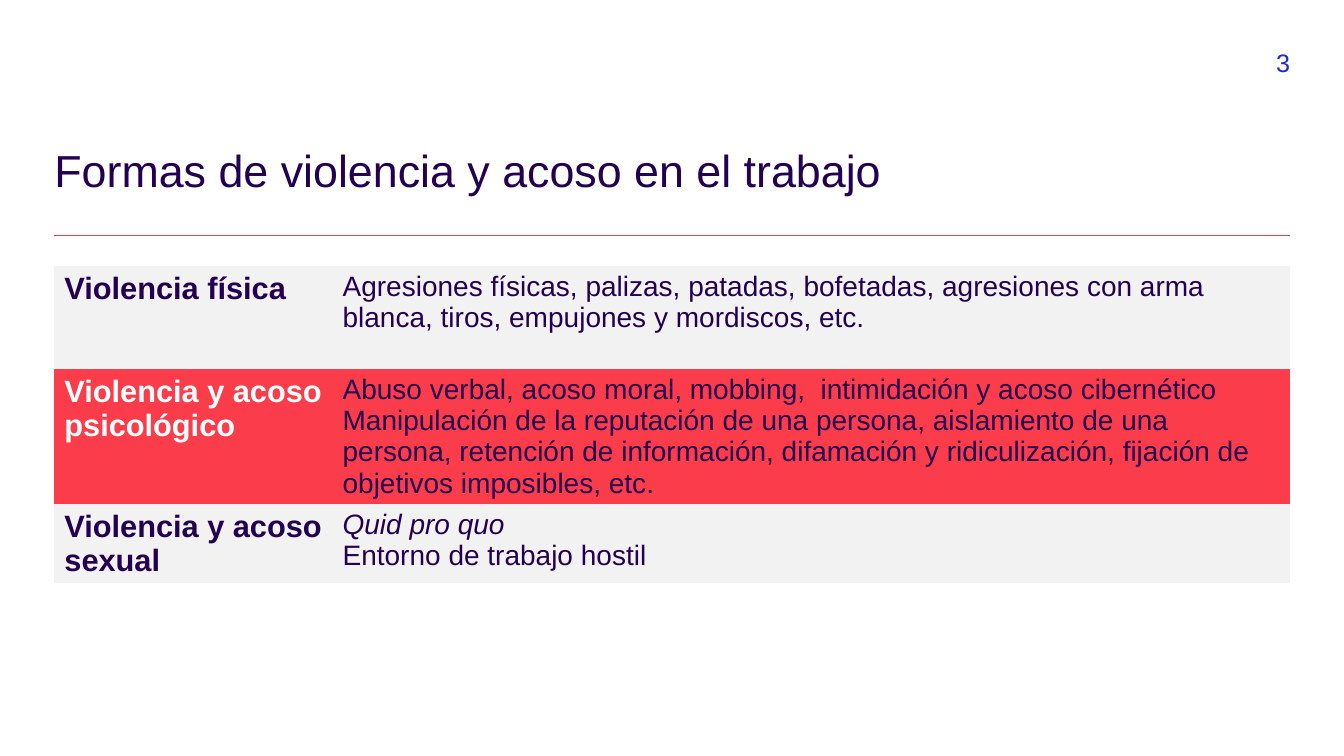
from lxml import etree
from pptx import Presentation
from pptx.dml.color import RGBColor
from pptx.enum import shapes, text
from pptx.oxml import ns
from pptx.util import Cm, Pt

PLUM = RGBColor(0x23, 0x00, 0x50)
RED = RGBColor(0xFA, 0x3C, 0x4B)
BLUE = RGBColor(0x1E, 0x2D, 0xBE)
GREY = RGBColor(0xF2, 0xF2, 0xF2)
WHITE = RGBColor(0xFF, 0xFF, 0xFF)

TITLE = "Formas de violencia y acoso en el trabajo"
PAGE = "3"
ROWS = [
    ("Violencia física", [
        "Agresiones físicas, palizas, patadas, bofetadas, agresiones con arma "
        "blanca, tiros, empujones y mordiscos, etc."], 2.59),
    ("Violencia y acoso psicológico", [
        "Abuso verbal, acoso moral, mobbing,  intimidación y acoso cibernético",
        "Manipulación de la reputación de una persona, aislamiento de una "
        "persona, retención de información, difamación y ridiculización, "
        "fijación de objetivos imposibles, etc."], 3.4),
    ("Violencia y acoso sexual", [
        "Quid pro quo",
        "Entorno de trabajo hostil"], 1.98),
]
ITALIC = {"Quid pro quo"}
COLS = (7.01, 24.13)
LEFT, WIDTH = 1.37, sum(COLS)
RIGHT = LEFT + WIDTH


def write(frame, lines, size, color=PLUM, bold=False, align=None, space=None):
    frame.word_wrap = True
    for i, line in enumerate(lines):
        par = frame.add_paragraph() if i else frame.paragraphs[0]
        par.alignment = align
        par.line_spacing = space
        run = par.add_run()
        run.text = line
        font = run.font
        font.name, font.size, font.bold = "Arial", Pt(size), bold
        font.italic = line in ITALIC
        font.color.rgb = color


def trim(frame):
    frame.margin_left = frame.margin_right = 0
    frame.margin_top = frame.margin_bottom = 0
    frame.vertical_anchor = text.MSO_ANCHOR.TOP


def place(shape, left, top, width, height):
    shape.left, shape.top = Cm(left), Cm(top)
    shape.width, shape.height = Cm(width), Cm(height)


def main():
    deck = Presentation()
    deck.slide_width, deck.slide_height = Cm(33.87), Cm(19.05)
    slide = deck.slides.add_slide(deck.slide_layouts[5])
    items = slide.shapes

    rule = items.add_connector(shapes.MSO_CONNECTOR.STRAIGHT,
                               Cm(LEFT), Cm(5.92), Cm(RIGHT), Cm(5.92))
    rule.line.color.rgb, rule.line.width = RED, Pt(0.5)
    etree.SubElement(rule._element.spPr, ns.qn("a:effectLst"))

    title = items.title
    place(title, LEFT, 3.96, WIDTH, 2.01)
    trim(title.text_frame)
    write(title.text_frame, [TITLE], 32, align=text.PP_ALIGN.LEFT, space=0.7)

    table = items.add_table(len(ROWS), len(COLS), Cm(LEFT), Cm(6.71),
                            Cm(WIDTH), Cm(sum(row[2] for row in ROWS))).table
    table.first_row = table.horz_banding = False
    for col, width in zip(table.columns, COLS):
        col.width = Cm(width)
    for i, (head, lines, height) in enumerate(ROWS):
        table.rows[i].height = Cm(height)
        odd = i % 2
        for j in range(len(COLS)):
            cell = table.cell(i, j)
            cell.fill.solid()
            cell.fill.fore_color.rgb = RED if odd else GREY
            props = cell._tc.get_or_add_tcPr()
            for k, side in enumerate(("lnL", "lnR", "lnT", "lnB")):
                edge = etree.Element(ns.qn("a:" + side), w="0")
                etree.SubElement(edge, ns.qn("a:noFill"))
                props.insert(k, edge)
        write(table.cell(i, 0).text_frame, [head], 22,
              color=WHITE if odd else PLUM, bold=True)
        write(table.cell(i, 1).text_frame, lines, 20)

    page = items.add_textbox(Cm(RIGHT - 1.5), Cm(1.19), Cm(1.5), Cm(0.79))
    trim(page.text_frame)
    write(page.text_frame, [PAGE], 18, color=BLUE, align=text.PP_ALIGN.RIGHT)

    deck.save("out.pptx")


if __name__ == "__main__":
    main()
